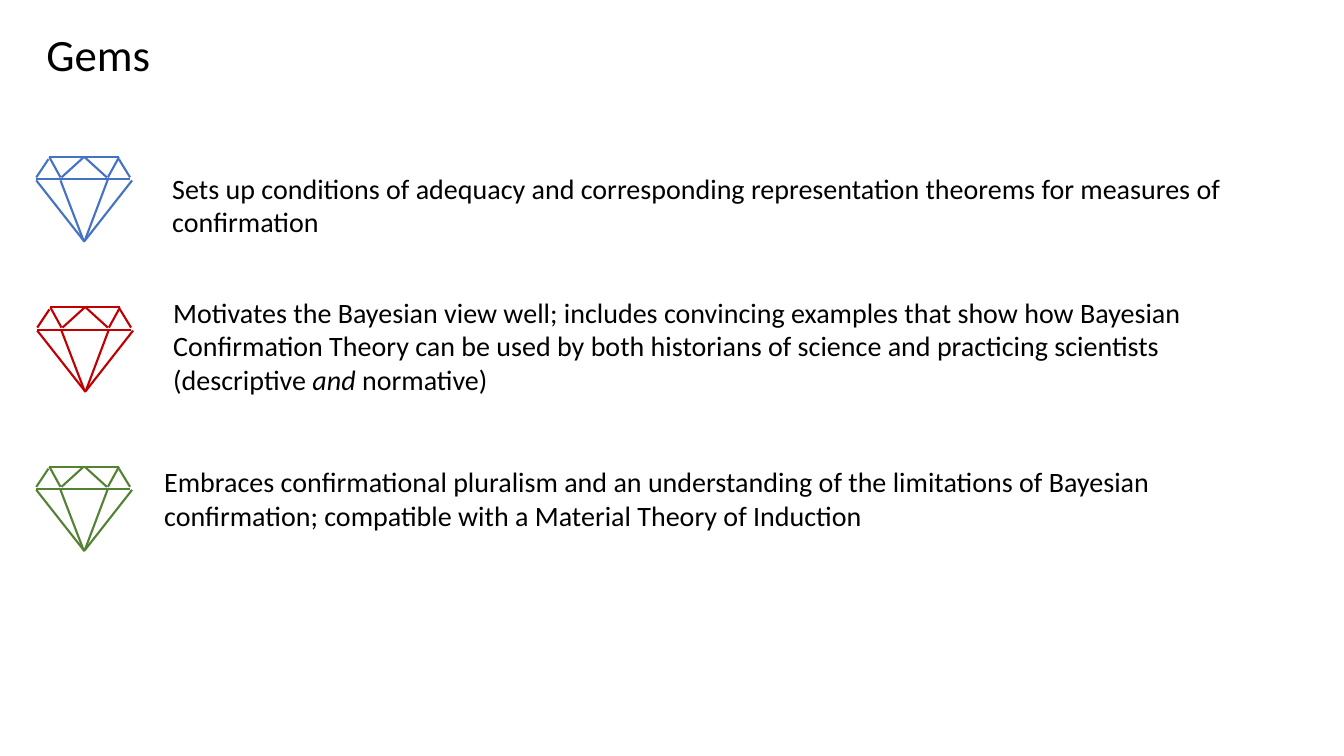
from lxml.etree import SubElement
from pptx import Presentation
from pptx.dml.color import RGBColor
from pptx.enum.shapes import MSO_CONNECTOR
from pptx.enum.text import MSO_ANCHOR, MSO_AUTO_SIZE, PP_ALIGN
from pptx.oxml.ns import qn
from pptx.util import Pt

PX = 9144  # one px is a hundredth of an inch
BLACK = RGBColor(0x00, 0x00, 0x00)
BLUE = RGBColor(0x44, 0x72, 0xC4)
RED = RGBColor(0xC0, 0x00, 0x00)
GREEN = RGBColor(0x54, 0x82, 0x35)

HEAD = {"name": "Calibri", "size": Pt(32), "bold": False}
BODY = {"name": "Calibri", "size": Pt(20)}
FRAME = {"word_wrap": True, "auto_size": MSO_AUTO_SIZE.NONE}

# Edges of a gem, from its top left corner
EDGES = [
    ((13, 0), (82, 0)), ((12, 2), (0, 20)), ((82, 2), (93, 20)),   # crown
    ((48, 84), (0, 23)), ((48, 83), (95, 23)), ((0, 22), (93, 22)),  # sides
    ((47, 83), (24, 23)), ((48, 83), (71, 22)),                    # inner rays
    ((13, 0), (24, 20)), ((82, 0), (71, 20)),                      # facets
    ((47, 0), (25, 20)), ((48, 0), (70, 20)),
]

# Colour, gem corner, text box, runs as (words, italic)
ROWS = [
    (BLUE, (36, 156), (161, 165, 1119, 77), [
        ("Sets up conditions of adequacy and corresponding representation "
         "theorems for measures of confirmation", False)]),
    (RED, (37, 305), (162, 288, 1124, 111), [
        ("Motivates the Bayesian view well; includes convincing examples that "
         "show how Bayesian Confirmation Theory can be used by both historians "
         "of science and practicing scientists (descriptive ", False),
        ("and", True), (" normative)", False)]),
    (GREEN, (36, 463), (153, 456, 1119, 77), [
        ("Embraces confirmational pluralism and an understanding of the "
         "limitations of Bayesian confirmation; compatible with a Material "
         "Theory of Induction", False)]),
]


def style(item, form):
    for key, value in form.items():
        setattr(item, key, value)


def write(para, words, form):
    run = para.add_run()
    run.text = words
    style(run.font, form)
    run.font.color.rgb = BLACK


def add_title(slide, box, words):
    title = slide.shapes.title
    names = ("left", "top", "width", "height")
    style(title, {name: v * PX for name, v in zip(names, box)})
    style(title.text_frame, {**FRAME, "vertical_anchor": MSO_ANCHOR.MIDDLE})
    para = title.text_frame.paragraphs[0]
    style(para, {"alignment": PP_ALIGN.LEFT, "line_spacing": 0.9})
    write(para, words, HEAD)


def add_gem(slide, corner, color):
    gem = slide.shapes.add_group_shape()
    x, y = corner
    for (ax, ay), (bx, by) in EDGES:
        ends = [v * PX for v in (x + ax, y + ay, x + bx, y + by)]
        edge = gem.shapes.add_connector(MSO_CONNECTOR.STRAIGHT, *ends)
        edge.line.color.rgb = color
        edge.line.width = Pt(1.5)
        SubElement(edge._element.spPr, qn("a:effectLst"))


def add_text(slide, box, runs):
    frame = slide.shapes.add_textbox(*[v * PX for v in box]).text_frame
    style(frame, {**FRAME, "auto_size": MSO_AUTO_SIZE.SHAPE_TO_FIT_TEXT})
    for words, slant in runs:
        write(frame.paragraphs[0], words, {**BODY, "italic": slant})


def main():
    deck = Presentation()
    style(deck, {"slide_width": 1333 * PX, "slide_height": 750 * PX})
    slide = deck.slides.add_slide(deck.slide_layouts[5])
    add_title(slide, (36, -16, 1150, 145), "Gems")
    for color, corner, box, runs in ROWS:
        add_gem(slide, corner, color)
        add_text(slide, box, runs)
    deck.save("out.pptx")


if __name__ == "__main__":
    main()
